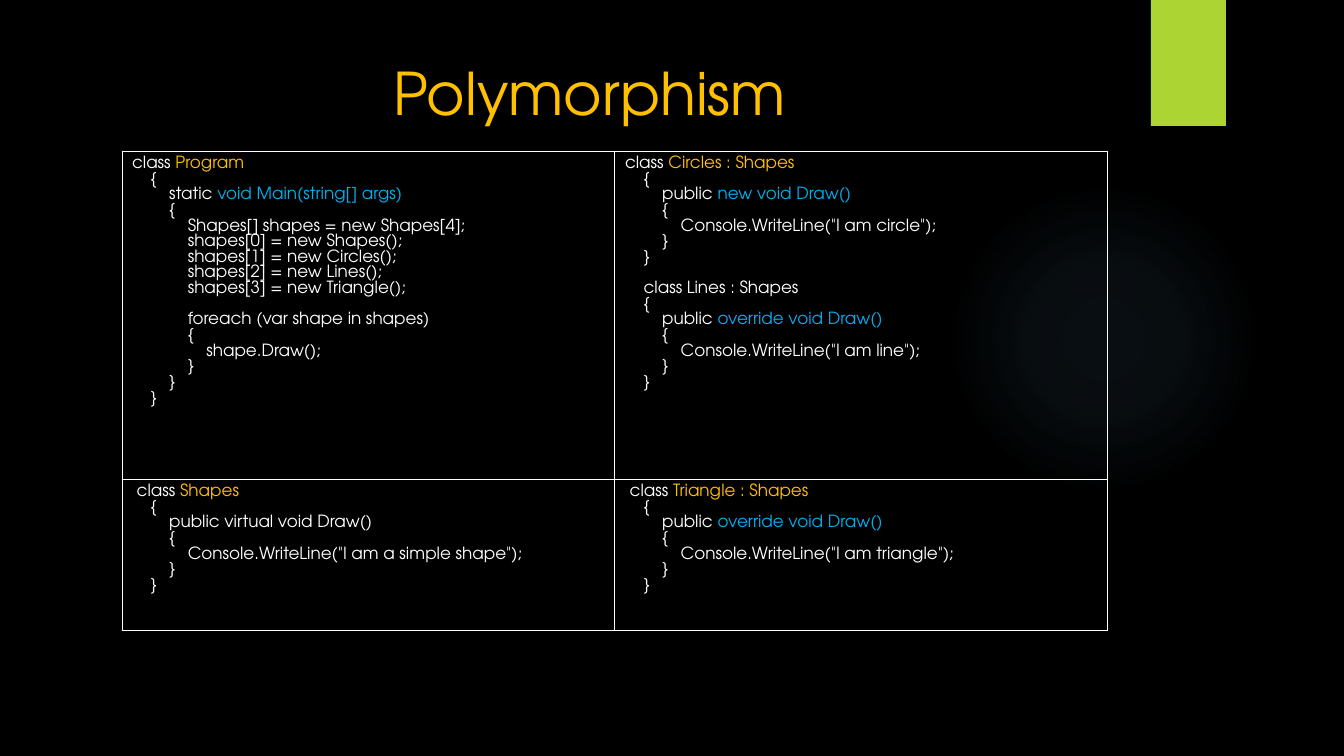
from dataclasses import dataclass

from pptx import Presentation
from pptx.dml.color import RGBColor
from pptx.enum.shapes import MSO_SHAPE as Preset
from pptx.enum.text import MSO_ANCHOR as Anchor, PP_ALIGN as Align
from pptx.oxml import parse_xml
from pptx.oxml.ns import nsdecls, qn
from pptx.util import Inches, Pt


@dataclass(frozen=True)
class Theme:
    font: str = "TeX Gyre Adventor"
    background: str = "000000"
    text: str = "FFFFFF"
    type_name: str = "FFC000"
    signature: str = "00B0F0"
    ribbon: str = "ACD433"
    glow: str = "7AC4F0"
    title_size: int = 42
    code_size: int = 12
    code_gap: float = 11.16
    border_width: float = 0.75


PROGRAM = """class |Program
    {
        static |void Main(string[] args)
        {
            Shapes[] shapes = new Shapes[4];
            shapes[0] = new Shapes();
            shapes[1] = new Circles();
            shapes[2] = new Lines();
            shapes[3] = new Triangle();

            foreach (var shape in shapes)
            {
                shape.Draw();
            }
        }
    }"""

CIRCLES_AND_LINES = """class |Circles : Shapes
    {
        public |new void Draw()
        {
            Console.WriteLine("I am circle");
        }
    }

    class Lines : Shapes
    {
        public |override void Draw()
        {
            Console.WriteLine("I am line");
        }
    }"""

SHAPES = """ class |Shapes
    {
        public virtual void Draw()
        {
            Console.WriteLine("I am a simple shape");
        }
    }"""

TRIANGLE = """ class |Triangle : Shapes
    {
        public |override void Draw()
        {
            Console.WriteLine("I am triangle");
        }
    }"""


def px(length):
    return round(length * Inches(1) / 100.8)


def rgb(color):
    return RGBColor.from_string(color)


class SlideBuilder:
    def __init__(self, presentation, theme):
        self.theme = theme
        self.slide = presentation.slides.add_slide(presentation.slide_layouts[6])
        fill = self.slide.background.fill
        fill.solid()
        fill.fore_color.rgb = rgb(theme.background)

    def shape(self, preset, *box):
        shape = self.slide.shapes.add_shape(preset, *map(px, box))
        shape.line.fill.background()
        shape.shadow.inherit = False
        return shape

    def glow(self, *box):
        shape = self.shape(Preset.OVAL, *box)
        shape.fill.background()
        stops = "".join(
            f'<a:gs pos="{position}000"><a:srgbClr val="{self.theme.glow}">'
            f'<a:alpha val="{alpha}000"/></a:srgbClr></a:gs>'
            for position, alpha in ((0, 7), (36, 6), (69, 0))
        )
        gradient = parse_xml(
            f'<a:gradFill {nsdecls("a")}><a:gsLst>{stops}</a:gsLst><a:path path="circle">'
            '<a:fillToRect l="50000" t="50000" r="50000" b="50000"/></a:path></a:gradFill>'
        )
        properties = shape._element.spPr
        properties.replace(properties.find(qn("a:noFill")), gradient)

    def ribbon(self, *box):
        shape = self.shape(Preset.RECTANGLE, *box)
        shape.fill.solid()
        shape.fill.fore_color.rgb = rgb(self.theme.ribbon)
        shape._element.spPr.find(qn("a:effectLst")).append(parse_xml(
            f'<a:outerShdw {nsdecls("a")} blurRad="{Pt(3)}" dist="{Pt(2)}" dir="5400000" '
            'rotWithShape="0"><a:srgbClr val="000000"><a:alpha val="45000"/></a:srgbClr></a:outerShdw>'
        ))

    def title(self, text, *box):
        frame = self.slide.shapes.add_textbox(*map(px, box)).text_frame
        frame.word_wrap = True
        frame.vertical_anchor = Anchor.MIDDLE
        frame.margin_top = frame.margin_bottom = 0
        paragraph = frame.paragraphs[0]
        paragraph.text = text
        paragraph.alignment = Align.CENTER
        self.style(paragraph.font, self.theme.title_size, self.theme.type_name)

    def style(self, font, size, color):
        font.name = self.theme.font
        font.size = Pt(size)
        font.color.rgb = rgb(color)

    def code_table(self, left, top, column_width, row_heights, listings):
        columns = len(listings[0])
        table = self.slide.shapes.add_table(
            len(listings), columns, px(left), px(top),
            px(column_width * columns), px(sum(row_heights)),
        ).table
        table.first_row = table.horz_banding = False
        for column in table.columns:
            column.width = px(column_width)
        for row, height, codes in zip(table.rows, row_heights, listings):
            row.height = px(height)
            for cell, code in zip(row.cells, codes):
                cell.fill.background()
                self.borders(cell)
                self.code(cell.text_frame, code)

    def borders(self, cell):
        properties = cell._tc.get_or_add_tcPr()
        for index, side in enumerate("LRTB"):
            properties.insert(index, parse_xml(
                f'<a:ln{side} {nsdecls("a")} w="{Pt(self.theme.border_width)}"><a:solidFill>'
                f'<a:srgbClr val="{self.theme.text}"/></a:solidFill></a:ln{side}>'
            ))

    def code(self, frame, code):
        theme = self.theme
        for block_index, block in enumerate(code.split("\n\n")):
            for line_index, line in enumerate(block.split("\n")):
                is_first = block_index == line_index == 0
                paragraph = frame.paragraphs[0] if is_first else frame.add_paragraph()
                if block_index and not line_index:
                    paragraph.space_before = Pt(theme.code_gap)
                self.style(paragraph.font, theme.code_size, theme.text)
                plain, _, accent = line.partition("|")
                paragraph.add_run().text = plain
                if accent:
                    run = paragraph.add_run()
                    run.text = accent
                    is_class = plain.strip() == "class"
                    run.font.color.rgb = rgb(theme.type_name if is_class else theme.signature)


def main():
    presentation = Presentation()
    presentation.slide_width = px(1344)
    presentation.slide_height = px(756)
    builder = SlideBuilder(presentation, Theme())
    builder.glow(949, 184, 310, 310)
    builder.ribbon(1151, 0, 75, 126)
    builder.title("Polymorphism", 71, 41, 1037, 101)
    builder.code_table(
        122, 151, 493, (260, 120),
        ((PROGRAM, CIRCLES_AND_LINES), (SHAPES, TRIANGLE)),
    )
    presentation.save("out.pptx")


if __name__ == "__main__":
    main()
